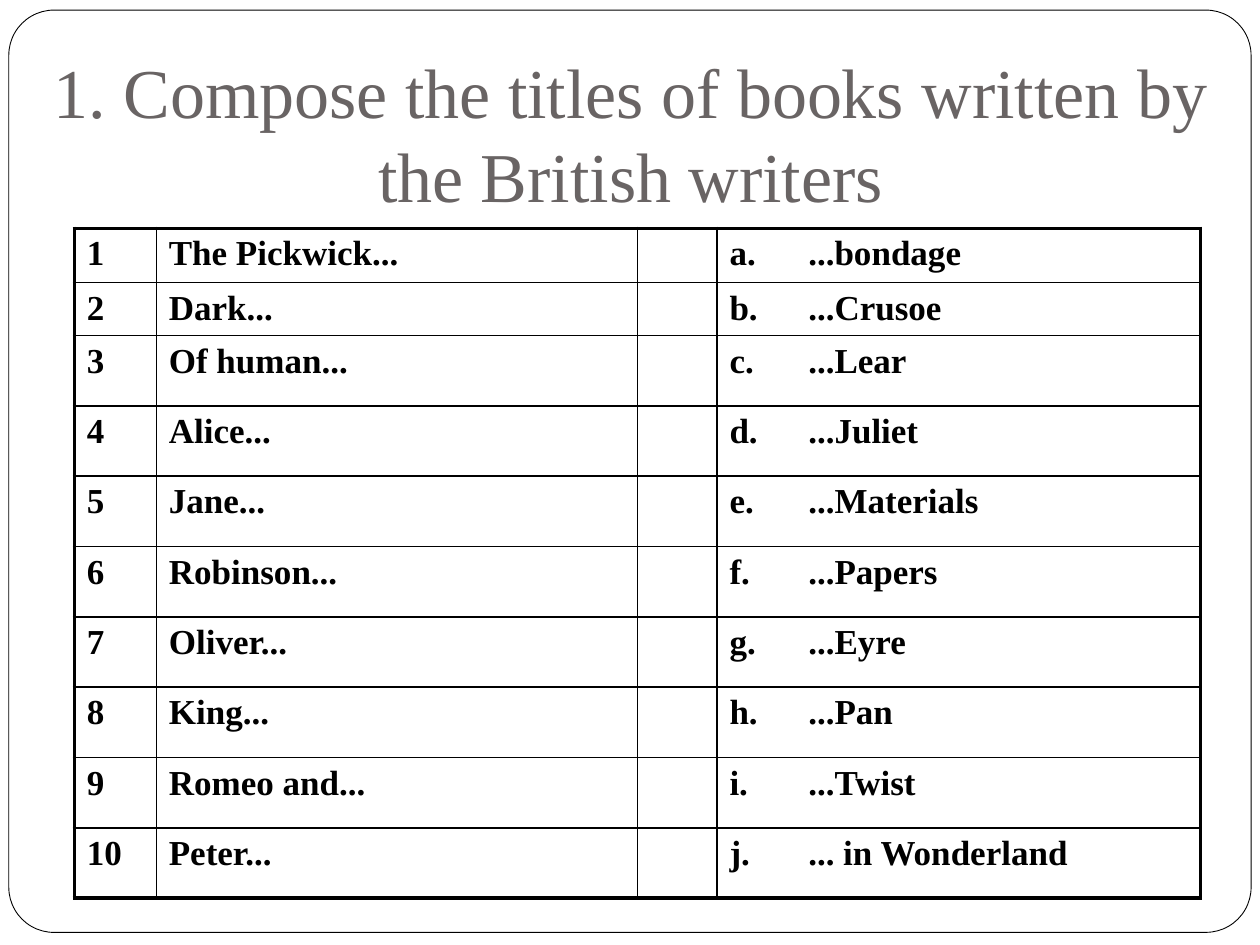
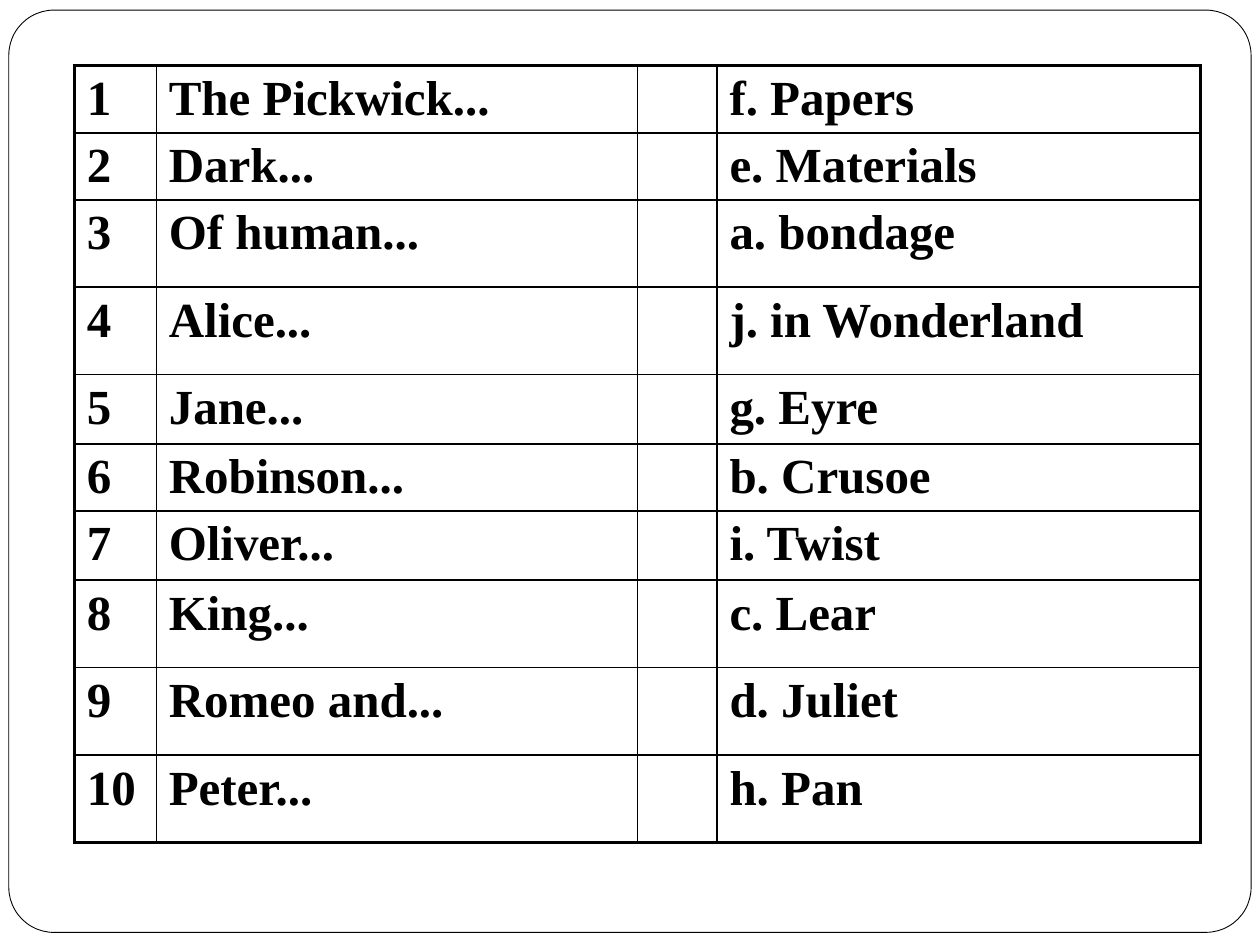
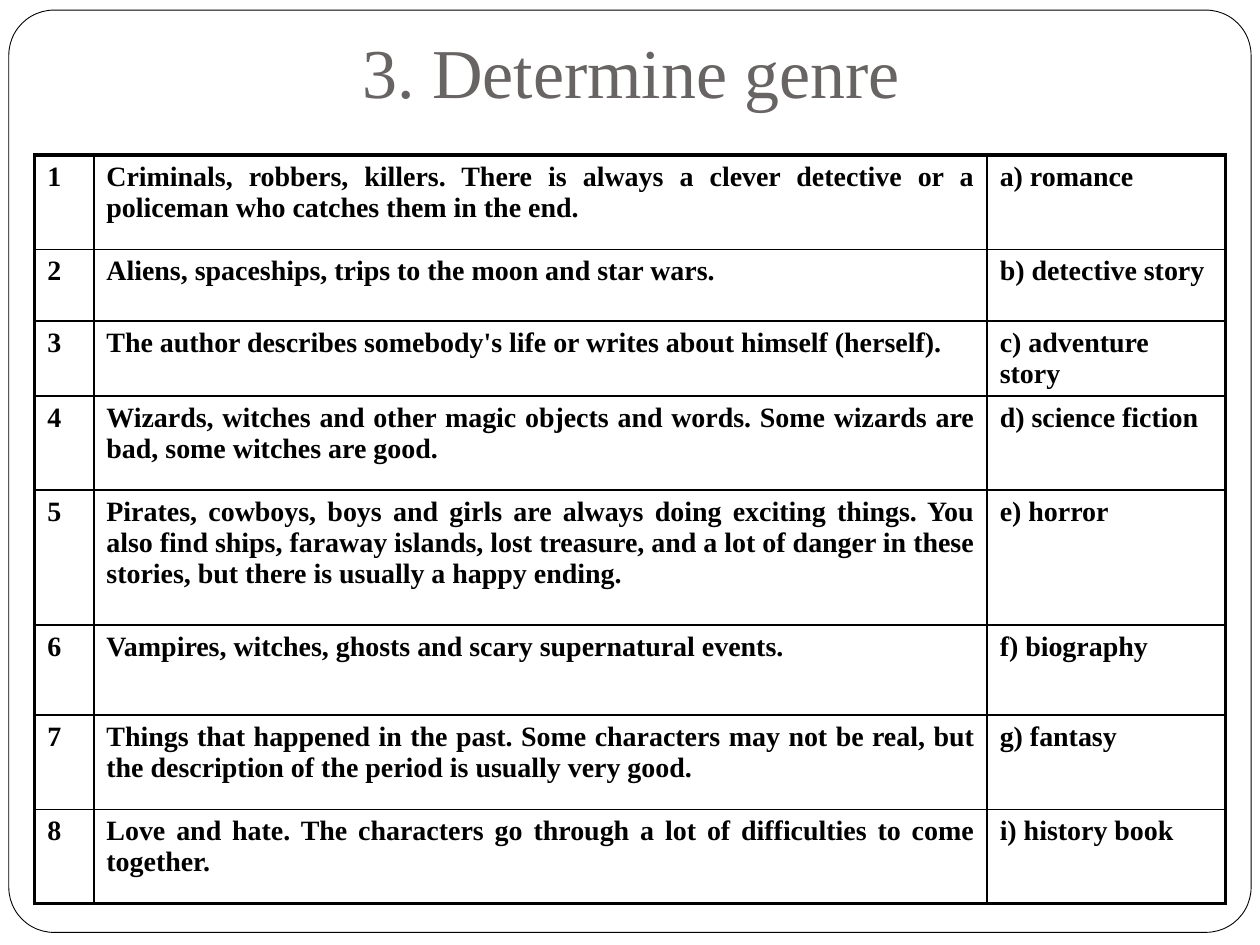
from lxml import etree
from pptx import Presentation
from pptx.dml.color import RGBColor
from pptx.enum import shapes, text
from pptx.oxml.ns import qn
from pptx.util import Pt

TITLE_ONLY, BLANK = 5, 6
LEFT, CENTER, JUSTIFY = text.PP_ALIGN.LEFT, text.PP_ALIGN.CENTER, text.PP_ALIGN.JUSTIFY

OPENINGS = ["The Pickwick", "Dark", "Of human", "Alice", "Jane",
            "Robinson", "Oliver", "King", "Romeo and", "Peter"]
ENDINGS = dict(zip("abcdefghij", [
    "bondage", "Crusoe", "Lear", "Juliet", "Materials",
    "Papers", "Eyre", "Pan", "Twist", " in Wonderland"]))
ANSWER_ORDER = "feajgbicdh"
BOOK_COLUMNS = [46.8, 275.04, 45.36, 276.48]

GENRES = [
    ("Criminals, robbers, killers. There is always a clever detective or a "
     "policeman who catches them in the end.", "a) romance"),
    ("Aliens, spaceships, trips to the moon and star wars.", "b) detective story"),
    ("The author describes somebody's life or writes about himself (herself).",
     "c) adventure story"),
    ("Wizards, witches and other magic objects and words. Some wizards are bad, "
     "some witches are good.", "d) science fiction"),
    ("Pirates, cowboys, boys and girls are always doing exciting things. You also "
     "find ships, faraway islands, lost treasure, and a lot of danger in these "
     "stories, but there is usually a happy ending.", "e) horror"),
    ("Vampires, witches, ghosts and scary supernatural events.", "f) biography"),
    ("Things that happened in the past. Some characters may not be real, but the "
     "description of the period is usually very good.", "g) fantasy"),
    ("Love and hate. The characters go through a lot of difficulties to come "
     "together.", "i) history book"),
]


def rgb(value):
    return RGBColor.from_string(value)


class Deck:
    FONT = "Times New Roman"
    INK, PAPER, TITLE_INK = "000000", "FFFFFF", "696464"
    TITLE_SIZE = 40
    INNER_LINE, OUTER_LINE = 1, 2.25
    TAB = 45

    def __init__(self):
        self.prs = Presentation()
        self.prs.slide_width, self.prs.slide_height = Pt(720), Pt(540)
        self.slide = None

    def new_slide(self, layout):
        self.slide = self.prs.slides.add_slide(self.prs.slide_layouts[layout])
        self.frame()

    def frame(self):
        """Rounded page border, sent behind everything else."""
        border = self.slide.shapes.add_shape(
            shapes.MSO_SHAPE.ROUNDED_RECTANGLE, Pt(5.04), Pt(5.76), Pt(709.92), Pt(527.04))
        border.adjustments[0] = 0.049
        border.shadow.inherit = False
        border.fill.solid()
        border.fill.fore_color.rgb = rgb(self.PAPER)
        border.line.color.rgb = rgb(self.INK)
        border.line.width = Pt(0.5)
        self.slide.shapes._spTree.insert(2, border._element)

    def styled_run(self, paragraph, words, align, size, color, bold):
        paragraph.alignment = align
        run = paragraph.add_run()
        run.text = words
        style = {"name": self.FONT, "size": Pt(size), "bold": bold}
        for name, value in style.items():
            setattr(run.font, name, value)
        run.font.color.rgb = rgb(color)

    def title(self, words, left, top, width, height):
        heading = self.slide.shapes.title
        box = {"left": left, "top": top, "width": width, "height": height}
        for name, value in box.items():
            setattr(heading, name, Pt(value))
        body = {"margin_left": Pt(7.2), "margin_right": Pt(7.2), "margin_top": Pt(3.6),
                "margin_bottom": Pt(7.2), "word_wrap": True,
                "vertical_anchor": text.MSO_ANCHOR.BOTTOM,
                "auto_size": text.MSO_AUTO_SIZE.NONE}
        for name, value in body.items():
            setattr(heading.text_frame, name, value)
        self.styled_run(heading.text_frame.paragraphs[0], words, CENTER,
                        self.TITLE_SIZE, self.TITLE_INK, False)

    def cell_borders(self, cell, outer_sides):
        properties = cell._tc.get_or_add_tcPr()
        for side in "LRTB":
            weight = self.OUTER_LINE if side in outer_sides else self.INNER_LINE
            edge = etree.SubElement(properties, qn(f"a:ln{side}"), w=str(Pt(weight)))
            fill = etree.SubElement(edge, qn("a:solidFill"))
            etree.SubElement(fill, qn("a:srgbClr"), val=self.INK)

    def tab_stop(self, paragraph):
        stops = etree.SubElement(paragraph._p.get_or_add_pPr(), qn("a:tabLst"))
        etree.SubElement(stops, qn("a:tab"), pos=str(Pt(self.TAB)), algn="l")

    def table(self, rows, left, top, widths, heights, size, justified=()):
        """Grid with heavy outer and thin inner lines; justified lists column numbers."""
        grid = self.slide.shapes.add_table(
            len(rows), len(widths), Pt(left), Pt(top),
            Pt(sum(widths)), Pt(sum(heights))).table
        grid.first_row = grid.horz_banding = False
        for column, width in zip(grid.columns, widths):
            column.width = Pt(width)
        for row, height in zip(grid.rows, heights):
            row.height = Pt(height)
        last_row, last_column = len(rows) - 1, len(widths) - 1
        for r, row in enumerate(rows):
            for c, words in enumerate(row):
                cell = grid.cell(r, c)
                outer = {"L": c == 0, "R": c == last_column, "T": r == 0, "B": r == last_row}
                self.cell_borders(cell, [side for side in outer if outer[side]])
                cell.fill.background()
                if not words:
                    continue
                paragraph = cell.text_frame.paragraphs[0]
                align = JUSTIFY if c in justified else LEFT
                self.styled_run(paragraph, words, align, size, self.INK, True)
                if "\t" in words:
                    self.tab_stop(paragraph)


def book_rows(endings):
    return [(str(number), f"{opening}...", "", ending)
            for number, (opening, ending) in enumerate(zip(OPENINGS, endings), 1)]


def main():
    deck = Deck()

    deck.new_slide(TITLE_ONLY)
    deck.title("1. Compose the titles of books written by the British writers",
               14.4, 20.88, 691.92, 110.16)
    choices = [f"{letter}.\t...{ending}" for letter, ending in ENDINGS.items()]
    deck.table(book_rows(choices), 42.48, 130.5, BOOK_COLUMNS,
               [30.9, 30.3] + [40.2] * 8, 20)

    deck.new_slide(BLANK)
    answers = [f"{letter}. {ENDINGS[letter].strip()}" for letter in ANSWER_ORDER]
    deck.table(book_rows(answers), 42.48, 37.44, BOOK_COLUMNS,
               [38.5, 38.2, 50, 50, 39.6, 38.2, 39.6, 50, 50, 50], 28)

    deck.new_slide(TITLE_ONLY)
    deck.title("3. Determine genre", 36.72, 0, 648, 71.28)
    genre_rows = [(str(number), *genre) for number, genre in enumerate(GENRES, 1)]
    deck.table(genre_rows, 19.8, 88.56, [33.84, 510.48, 136.08],
               [53.9, 41, 42.8, 53.9, 77, 51.6, 53.9, 53.9], 16, justified=(1,))

    deck.prs.save("out.pptx")


if __name__ == "__main__":
    main()
